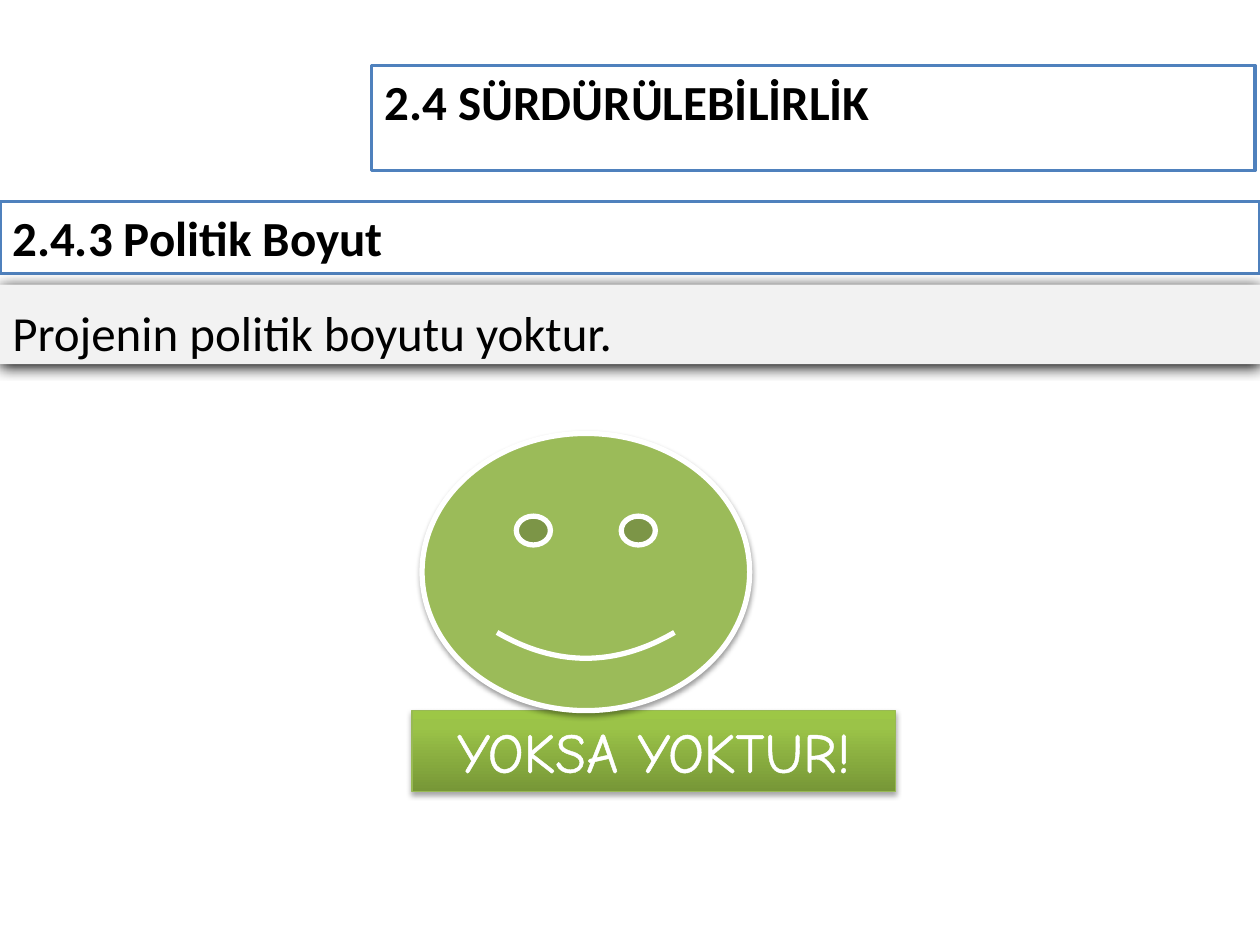
import copy
from dataclasses import dataclass

import pptx
import pptx.dml.color
import pptx.enum.shapes
import pptx.enum.text
import pptx.oxml
import pptx.oxml.ns
import pptx.util

Pt = pptx.util.Pt
Rgb = pptx.dml.color.RGBColor.from_string
Shapes = pptx.enum.shapes.MSO_SHAPE
Align = pptx.enum.text.PP_ALIGN
AutoSize = pptx.enum.text.MSO_AUTO_SIZE
Anchor = pptx.enum.text.MSO_ANCHOR


@dataclass(frozen=True)
class Theme:
    font: str = "Calibri"
    banner_font: str = "Comic Neue"
    text_size: int = 28
    banner_size: int = 32
    black: str = "000000"
    white: str = "FFFFFF"
    border: str = "4F81BD"
    panel: str = "F2F2F2"
    face: str = "9BBB59"
    banner_border: str = "98B955"
    banner_stops: tuple = ((0, "779737"), (0.8, "9BC348"), (1, "9DC746"))


theme = Theme()


def write(shape, text, font, size, color, align=Align.LEFT, bold=False):
    frame = shape.text_frame
    frame.text = text
    frame.word_wrap = True
    frame.auto_size = AutoSize.SHAPE_TO_FIT_TEXT
    frame.vertical_anchor = Anchor.TOP
    paragraph = frame.paragraphs[0]
    paragraph.alignment = align
    run = paragraph.runs[0]
    run.font.name = font
    run.font.size = Pt(size)
    run.font.bold = bold
    run.font.color.rgb = Rgb(color)
    return run


def add_shadow(shape, opacity, blur, distance):
    """Give the shape a black shadow that falls straight down."""
    shape.shadow.inherit = False
    effects = shape._element.spPr.find(pptx.oxml.ns.qn("a:effectLst"))
    effects.append(pptx.oxml.parse_xml(
        f'<a:outerShdw {pptx.oxml.ns.nsdecls("a")} blurRad="{Pt(blur)}" '
        f'dist="{Pt(distance)}" dir="5400000" rotWithShape="0">'
        f'<a:srgbClr val="{theme.black}"><a:alpha val="{opacity * 1000}"/></a:srgbClr>'
        '</a:outerShdw>'))


presentation = pptx.Presentation()
presentation.slide_width = Pt(720)
presentation.slide_height = Pt(540)
slide = presentation.slides.add_slide(presentation.slide_layouts[5])

# Headings
title = slide.shapes.title
title.left, title.top, title.width, title.height = Pt(212.4), Pt(37.44), Pt(504.72), Pt(41.04)
subtitle = slide.shapes.add_shape(Shapes.RECTANGLE, 0, Pt(115.2), Pt(720), Pt(41.04))
subtitle.shadow.inherit = False
for heading, text in ((title, "2.4 SÜRDÜRÜLEBİLİRLİK"), (subtitle, "2.4.3 Politik Boyut")):
    heading.fill.solid()
    heading.fill.fore_color.rgb = Rgb(theme.white)
    heading.line.color.rgb = Rgb(theme.border)
    heading.line.width = Pt(2)
    write(heading, text, theme.font, theme.text_size, theme.black, bold=True)

# Statement
statement = slide.shapes.add_shape(Shapes.RECTANGLE, 0, Pt(162.72), Pt(720), Pt(45.36))
statement.fill.solid()
statement.fill.fore_color.rgb = Rgb(theme.panel)
statement.line.fill.background()
add_shadow(statement, opacity=100, blur=8.5, distance=1)
write(statement, "Projenin politik boyutu yoktur.", theme.font, theme.text_size,
      theme.black, Align.JUSTIFY)
statement.text_frame.paragraphs[0].line_spacing = 1.2

# Banner
banner = slide.shapes.add_shape(Shapes.RECTANGLE, Pt(235.44), Pt(406.08), Pt(276.48), Pt(46.08))
banner.fill.gradient()
banner.fill.gradient_angle = 90
stop_list = banner._element.spPr.find(".//" + pptx.oxml.ns.qn("a:gsLst"))
stop_list.append(copy.deepcopy(stop_list[0]))
for stop, (position, color) in zip(banner.fill.gradient_stops, theme.banner_stops):
    stop.position = position
    stop.color.rgb = Rgb(color)
banner.line.color.rgb = Rgb(theme.banner_border)
banner.line.width = Pt(0.75)
add_shadow(banner, opacity=35, blur=3.1, distance=1.8)
banner_run = write(banner, "YOKSA YOKTUR!", theme.banner_font, theme.banner_size,
                   theme.white, Align.CENTER)
banner.text_frame.word_wrap = False
banner_run.font._element.insert(0, pptx.oxml.parse_xml(
    f'<a:ln {pptx.oxml.ns.nsdecls("a")} w="{Pt(1.45)}"><a:solidFill>'
    f'<a:srgbClr val="{theme.white}"/></a:solidFill></a:ln>'))

# Smiling face
face = slide.shapes.add_shape(Shapes.SMILEY_FACE, Pt(241.2), Pt(247.68), Pt(187.2), Pt(158.4))
face.fill.solid()
face.fill.fore_color.rgb = Rgb(theme.face)
face.line.color.rgb = Rgb(theme.white)
face.line.width = Pt(3)
add_shadow(face, opacity=38, blur=3.1, distance=1.6)

presentation.save("out.pptx")
